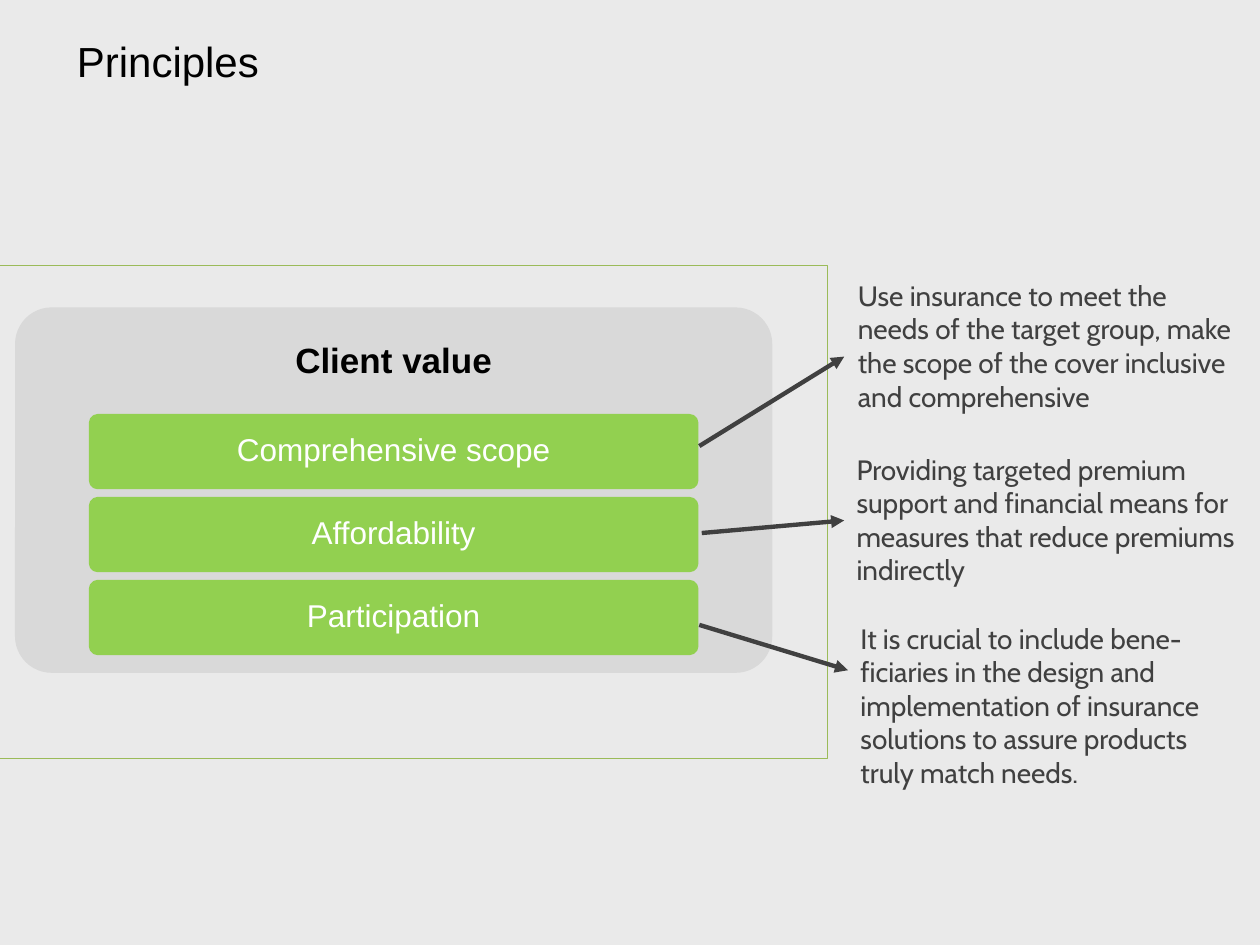
from lxml import etree
from pptx import Presentation
from pptx.dml.color import RGBColor
from pptx.enum.shapes import MSO_CONNECTOR, MSO_SHAPE
from pptx.enum.text import MSO_ANCHOR, MSO_AUTO_SIZE, PP_ALIGN
from pptx.oxml.ns import qn
from pptx.util import Pt

RECT, ROUNDED = MSO_SHAPE.RECTANGLE, MSO_SHAPE.ROUNDED_RECTANGLE
STRAIGHT = MSO_CONNECTOR.STRAIGHT
TOP, MIDDLE = MSO_ANCHOR.TOP, MSO_ANCHOR.MIDDLE
LEFT, CENTER = PP_ALIGN.LEFT, PP_ALIGN.CENTER
GROW, FIXED = MSO_AUTO_SIZE.SHAPE_TO_FIT_TEXT, MSO_AUTO_SIZE.NONE

TITLE_ONLY = 5
COLORS = {
    "background": "EAEAEA",
    "frame": "9BBB59",
    "panel": "D9D9D9",
    "principle": "92D050",
    "heading": "000000",
    "label": "FFFFFF",
    "note": "404040",
}

PRINCIPLE_LEFT, PRINCIPLE_TOP = 51.8, 237.6
PRINCIPLE_WIDTH, PRINCIPLE_HEIGHT, PRINCIPLE_PITCH = 346.3, 41, 47.4

# Label, explanation, explanation box, arrow start and end
PRINCIPLES = [
    ("Comprehensive scope",
     "Use insurance to meet the needs of the target group, make "
     "the scope of the cover inclusive and comprehensive",
     (483.1, 155.5, 231.1, 85), (399.6, 254.9), (482.4, 203.8)),
    ("Affordability",
     "Providing targeted premium support and financial means for "
     "measures that reduce premiums indirectly",
     (482.4, 254.9, 234.7, 85), (401, 304.6), (482.4, 297.4)),
    ("Participation",
     "It is crucial to include bene-\vficiaries in the design and "
     "implementation of insurance solutions to assure products\v"
     "truly match needs.",
     (484.6, 351.4, 229.7, 104.4), (399.6, 357.1), (484.6, 383)),
]


def rgb(name):
    return RGBColor.from_string(COLORS[name])


def write(shape, text, size, color, font="Arial", bold=False,
          align=LEFT, anchor=TOP, spacing=1.0, fit=FIXED):
    frame = shape.text_frame
    frame.text = text
    frame.word_wrap = True
    frame.auto_size = fit
    frame.vertical_anchor = anchor
    paragraph = frame.paragraphs[0]
    paragraph.alignment = align
    paragraph.line_spacing = spacing
    for run in paragraph.runs:
        run.font.name = font
        run.font.size = Pt(size)
        run.font.bold = bold
        run.font.color.rgb = rgb(color)


def add_box(slide, preset, bounds, fill=None, line=None, weight=1):
    box = slide.shapes.add_shape(preset, *map(Pt, bounds))
    box.shadow.inherit = False
    if preset == ROUNDED:
        box.adjustments[0] = 0.1
    if fill:
        box.fill.solid()
        box.fill.fore_color.rgb = rgb(fill)
    else:
        box.fill.background()
    if line:
        box.line.color.rgb = rgb(line)
        box.line.width = Pt(weight)
    else:
        box.line.fill.background()
    return box


def add_text(slide, bounds, text, size, color, **style):
    label = slide.shapes.add_textbox(*map(Pt, bounds))
    write(label, text, size, color, **style)


def add_arrow(slide, start, end):
    arrow = slide.shapes.add_connector(STRAIGHT, *map(Pt, start + end))
    arrow.line.color.rgb = rgb("note")
    arrow.line.width = Pt(2.5)
    line = arrow.line._get_or_add_ln()
    etree.SubElement(line, qn("a:tailEnd"), type="triangle")
    etree.SubElement(arrow._element.spPr, qn("a:effectLst"))


def add_title(slide, bounds, text):
    title = slide.shapes.title
    title.left, title.top, title.width, title.height = map(Pt, bounds)
    write(title, text, 24, "heading")


def add_principle(slide, row, label, note, note_bounds, start, end):
    top = PRINCIPLE_TOP + row * PRINCIPLE_PITCH
    bounds = (PRINCIPLE_LEFT, top, PRINCIPLE_WIDTH, PRINCIPLE_HEIGHT)
    button = add_box(slide, ROUNDED, bounds, "principle", "principle", 2)
    write(button, label, 18, "label", align=CENTER, anchor=MIDDLE, spacing=0.9)
    add_text(slide, note_bounds, note, 16, "note", font="Cabin", fit=GROW)
    add_arrow(slide, start, end)


def main():
    deck = Presentation()
    deck.slide_width, deck.slide_height = Pt(720), Pt(540)
    slide = deck.slides.add_slide(deck.slide_layouts[TITLE_ONLY])
    slide.background.fill.solid()
    slide.background.fill.fore_color.rgb = rgb("background")

    add_title(slide, (36.7, 16.6, 170, 36), "Principles")

    # Frame and panel with its heading
    add_box(slide, RECT, (-1.4, 151.9, 474.5, 281.5), line="frame", weight=0.5)
    add_box(slide, ROUNDED, (8.6, 175.7, 432.7, 208.8), fill="panel")
    add_text(slide, (8.6, 175.7, 432.7, 62.6), "Client value", 20, "heading",
             bold=True, align=CENTER, anchor=MIDDLE, spacing=0.9)

    # Principles, each with its explanation
    for row, principle in enumerate(PRINCIPLES):
        add_principle(slide, row, *principle)

    deck.save("out.pptx")


if __name__ == "__main__":
    main()
